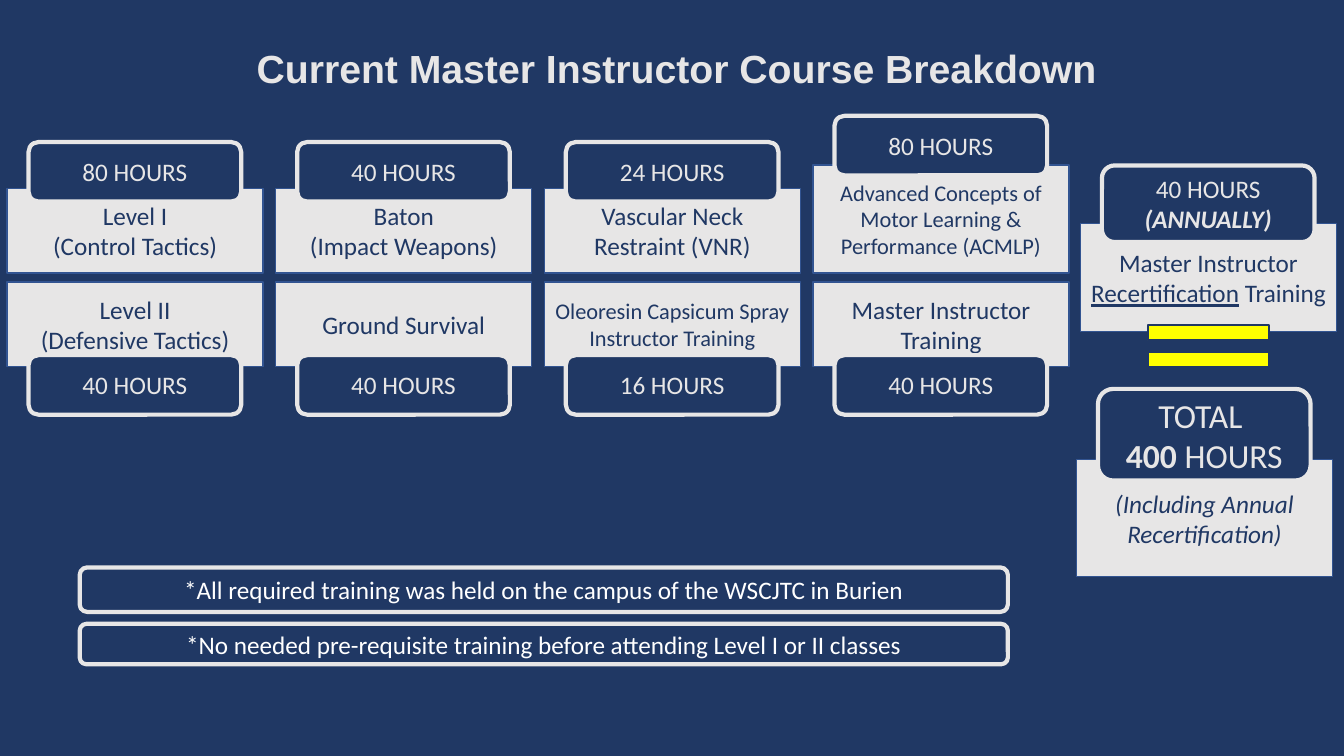
import dataclasses

import pptx
import pptx.dml.color
import pptx.enum.shapes
import pptx.enum.text
import pptx.util

Cm = pptx.util.Cm
SHAPES = pptx.enum.shapes.MSO_SHAPE


@dataclasses.dataclass(frozen=True)
class Theme:
    navy: str = "203864"
    pale: str = "E7E6E6"
    edge: str = "325491"
    white: str = "FFFFFF"
    yellow: str = "FFFF00"
    heading_font: str = "Arial"
    body_font: str = "Calibri"
    heading: int = 28
    total: int = 24
    body: int = 18
    small: int = 16


THEME = Theme()

# Lengths in centimetres
CARD_WIDTH, CARD_HEIGHT = 6.45, 2.13
TAB_WIDTH, TAB_HEIGHT = 5.36, 1.5
TAB_INSET = 0.54
COLUMN_LEFT, COLUMN_STEP = 0.18, 6.77
UPPER_BOTTOM, LOWER_TOP, LOWER_TAB_TOP = 6.88, 7.11, 8.95

# Upper card: text, size, hours, card height, tab top; lower card: text, size, hours
COURSES = [
    (("Level I\n(Control Tactics)", THEME.body, "80 HOURS", CARD_HEIGHT, 3.58),
     ("Level II\n(Defensive Tactics)", THEME.body, "40 HOURS")),
    (("Baton\n(Impact Weapons)", THEME.body, "40 HOURS", CARD_HEIGHT, 3.58),
     ("Ground Survival", THEME.body, "40 HOURS")),
    (("Vascular Neck Restraint (VNR)", THEME.body, "24 HOURS", CARD_HEIGHT, 3.58),
     ("Oleoresin Capsicum Spray Instructor Training", THEME.small, "16 HOURS")),
    (("Advanced Concepts of Motor Learning & Performance (ACMLP)",
      THEME.small, "80 HOURS", 2.72, 2.92),
     ("Master Instructor Training", THEME.body, "40 HOURS")),
]

NOTES = [
    ("*All required training was held on the campus of the WSCJTC in Burien", 14.3, 1.12),
    ("*No needed pre-requisite training before attending Level I or II classes", 15.72, 1.02),
]


def rgb(value):
    return pptx.dml.color.RGBColor.from_string(value)


def write(shape, spans, color, size, font=THEME.body_font):
    """Fill a shape with centred text; spans are (text, format) pairs."""
    frame = shape.text_frame
    settings = {
        "word_wrap": True,
        "auto_size": pptx.enum.text.MSO_AUTO_SIZE.NONE,
        "vertical_anchor": pptx.enum.text.MSO_ANCHOR.MIDDLE,
    }
    for name, value in settings.items():
        setattr(frame, name, value)
    para = frame.paragraphs[0]
    para.alignment = pptx.enum.text.PP_ALIGN.CENTER
    for text, extra in spans:
        for index, line in enumerate(text.split("\n")):
            if index:
                para.add_line_break()
            if not line:
                continue
            span = para.add_run()
            span.text = line
            span.font.color.rgb = rgb(color)
            formats = {"name": font, "size": pptx.util.Pt(size), **extra}
            for name, value in formats.items():
                setattr(span.font, name, value)


def add_box(page, kind, place, fill, line, weight):
    shape = page.shapes.add_shape(kind, *(Cm(length) for length in place))
    shape.shadow.inherit = False
    shape.fill.solid()
    shape.fill.fore_color.rgb = rgb(fill)
    shape.line.color.rgb = rgb(line)
    shape.line.width = pptx.util.Pt(weight)
    return shape


def add_card(page, left, top, height, spans, size=THEME.body):
    card = add_box(page, SHAPES.RECTANGLE, (left, top, CARD_WIDTH, height),
                   THEME.pale, THEME.edge, 1)
    write(card, spans, THEME.navy, size)


def add_badge(page, place, spans, color=THEME.pale, size=THEME.body):
    badge = add_box(page, SHAPES.ROUNDED_RECTANGLE, place, THEME.navy, THEME.pale, 3)
    write(badge, spans, color, size)


def add_tab(page, card_left, top, spans, height=TAB_HEIGHT, size=THEME.body):
    add_badge(page, (card_left + TAB_INSET, top, TAB_WIDTH, height), spans, size=size)


def add_title(page, text):
    title = page.shapes.title
    place = {"left": 6.1, "top": 0.99, "width": 21.89, "height": 1.45}
    for name, value in place.items():
        setattr(title, name, Cm(value))
    write(title, [(text, {"bold": True})], THEME.pale, THEME.heading, THEME.heading_font)


def add_course_column(page, left, upper, lower):
    text, size, hours, height, tab_top = upper
    add_card(page, left, UPPER_BOTTOM - height, height, [(text, {})], size)
    add_tab(page, left, tab_top, [(hours, {})])
    text, size, hours = lower
    add_card(page, left, LOWER_TOP, CARD_HEIGHT, [(text, {})], size)
    add_tab(page, left, LOWER_TAB_TOP, [(hours, {})])


def main():
    deck = pptx.Presentation()
    deck.slide_width, deck.slide_height = Cm(33.87), Cm(19.05)
    page = deck.slides.add_slide(deck.slide_layouts.get_by_name("Title Only"))
    page.background.fill.solid()
    page.background.fill.fore_color.rgb = rgb(THEME.navy)
    add_title(page, "Current Master Instructor Course Breakdown")

    # Annual recertification
    add_card(page, 27.23, 5.64, 2.72, [
        ("Master Instructor ", {}),
        ("Recertification", {"underline": True}),
        (" Training", {}),
    ])
    add_tab(page, 27.23, 4.17, [
        ("40 HOURS ", {}),
        ("(ANNUALLY)", {"bold": True, "italic": True}),
    ], height=1.93)

    # Course columns
    for column, (upper, lower) in enumerate(COURSES):
        add_course_column(page, COLUMN_LEFT + column * COLUMN_STEP, upper, lower)

    # Total hours
    add_card(page, 27.13, 11.58, 2.95,
             [("(Including Annual Recertification)", {"italic": True})])
    add_tab(page, 27.13, 9.8, [
        ("TOTAL \n", {}),
        ("400", {"bold": True}),
        (" HOURS", {}),
    ], height=2.31, size=THEME.total)

    # Equals sign
    for top in (8.2, 8.87):
        add_box(page, SHAPES.RECTANGLE, (28.93, top, 3.05, 0.38),
                THEME.yellow, THEME.navy, 1.5)

    # Notes
    for text, top, height in NOTES:
        add_badge(page, (2.01, top, 23.39, height), [(text, {})], THEME.white)

    deck.save("out.pptx")


if __name__ == "__main__":
    main()
